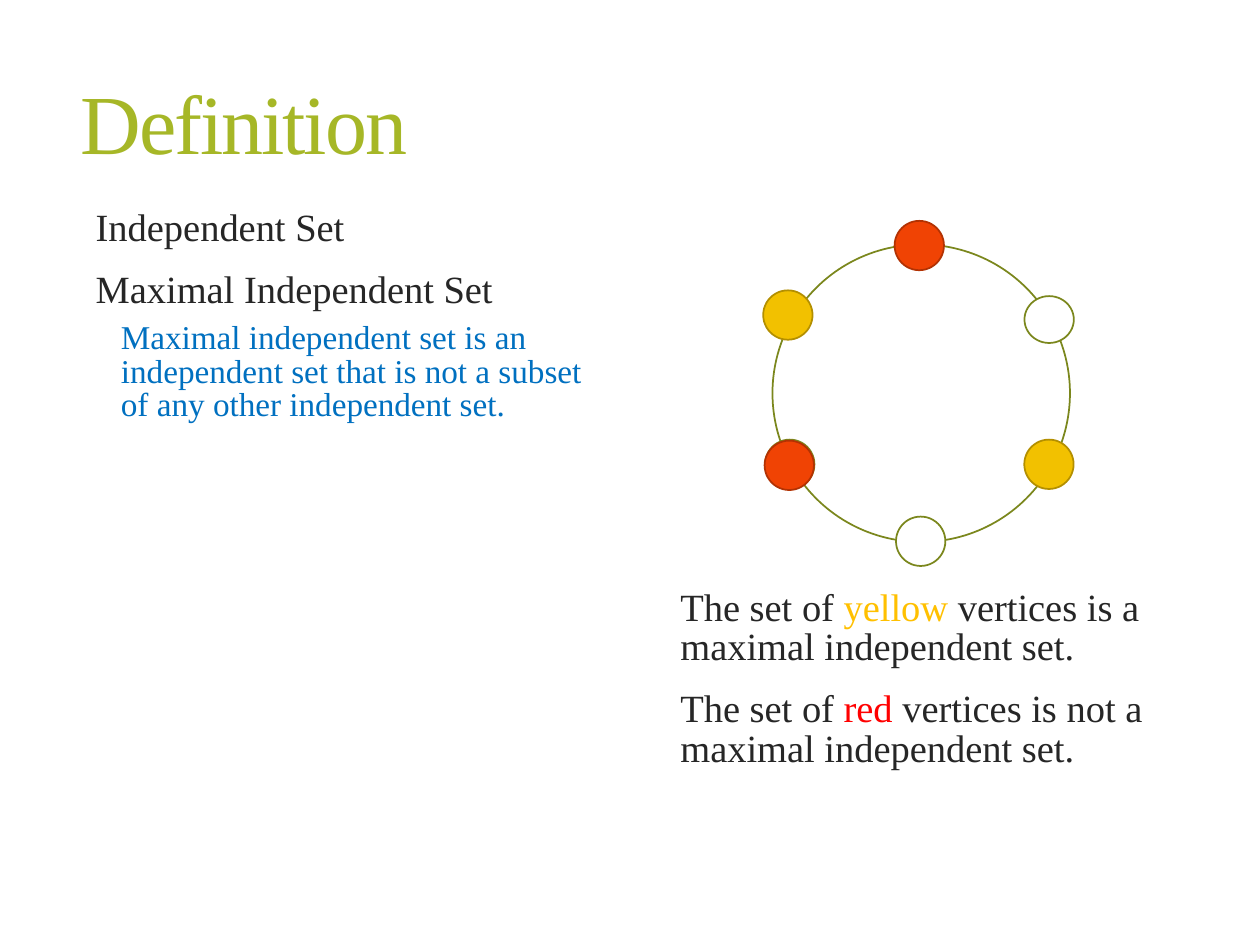
"""Build a slide that defines maximal independent sets on a ring of six vertices."""
from pptx import Presentation
from pptx.dml.color import RGBColor
from pptx.enum import text as t
from pptx.oxml import xmlchemy as x
from pptx.util import Pt

INK = {
    "title": "A6B727", "body": "262626", "note": "0070C0",
    "amber": "FFC000", "alert": "FF0000",
    "white": "FFFFFF", "olive": "7B871D",
    "red": "F04304", "rust": "B23203",
    "yellow": "F2C100", "ochre": "B38F00",
}
FONT = "Times New Roman"
SIZE = 28.2


def tint(name):
    """Return the named colour."""
    return RGBColor.from_string(INK[name])


def place(item, left, top, width, height):
    """Move and size a placeholder."""
    item.left, item.top = Pt(left), Pt(top)
    item.width, item.height = Pt(width), Pt(height)


def write(para, words, size=22, ink="body", track=None):
    """Add a formatted run to a paragraph."""
    run = para.add_run()
    run.text = words
    run.font.name, run.font.size = FONT, Pt(size)
    run.font.color.rgb = tint(ink)
    if track:
        run.font._element.set("spc", str(int(track * 100)))


def frame(item, anchor):
    """Prepare the text frame of a placeholder."""
    area = item.text_frame
    area.word_wrap = True
    area.auto_size = t.MSO_AUTO_SIZE.NONE
    area.vertical_anchor = anchor
    return area


def fill_list(item, rows):
    """Write rows of (level, runs) as a list without marks."""
    area = frame(item, t.MSO_ANCHOR.TOP)
    for i, (level, runs) in enumerate(rows):
        para = area.add_paragraph() if i else area.paragraphs[0]
        para.level = level
        para.line_spacing = 0.85
        para.space_before = Pt(6 if level else 13)
        props = para._p.get_or_add_pPr()
        props.set("marL", str(Pt(21.6 if level else 7.2)))
        props.set("indent", "0")
        props.append(x.OxmlElement("a:buNone"))
        for words, ink in runs:
            write(para, words, size=19 if level else 22, ink=ink)


def disc(shapes, left, top, fill, line, wide=SIZE, high=SIZE):
    """Draw an outlined ellipse."""
    item = shapes.add_shape(9, Pt(left), Pt(top), Pt(wide), Pt(high))
    item.shadow.inherit = False
    item.fill.solid()
    item.fill.fore_color.rgb = tint(fill)
    item.line.color.rgb = tint(line)
    item.line.width = Pt(1)


def draw_ring(shapes):
    """Draw the cycle and its coloured vertices."""
    ring = shapes.add_group_shape().shapes
    disc(ring, 441.4, 139.7, "white", "olive", 170, 170)
    disc(ring, 585.4, 169.2, "white", "olive", high=26.8)
    for left, top in ((437.2, 251.2), (512, 295.2)):
        disc(ring, left, top, "white", "olive")
    for left, top, fill, line in (
        (511.2, 126.2, "red", "rust"),
        (436.9, 251.8, "red", "rust"),
        (436.1, 165.9, "yellow", "ochre"),
        (585.3, 251.2, "yellow", "ochre"),
    ):
        disc(shapes, left, top, fill, line)


def main():
    """Build and save the slide."""
    deck = Presentation()
    deck.slide_width, deck.slide_height = Pt(720), Pt(540)
    slide = deck.slides.add_slide(deck.slide_layouts[3])
    title, left, right = list(slide.placeholders)[:3]

    place(title, 38.9, 39.6, 636.5, 66.2)
    para = frame(title, t.MSO_ANCHOR.MIDDLE).paragraphs[0]
    para.alignment = t.PP_ALIGN.LEFT
    para.line_spacing = 0.9
    write(para, "Definition", size=48, ink="title", track=-1.2)

    place(left, 40.3, 116.6, 299.5, 337)
    fill_list(left, [
        (0, [("Independent Set", "body")]),
        (0, [("Maximal Independent Set", "body")]),
        (1, [("Maximal independent set is an independent set that is "
              "not a subset of any other independent set.", "note")]),
    ])

    place(right, 374.4, 333.6, 299.5, 120)
    fill_list(right, [
        (0, [("The set of ", "body"), (word, ink),
             (f" vertices is {verb}a maximal independent set.", "body")])
        for word, ink, verb in (("yellow", "amber", ""), ("red", "alert", "not "))
    ])

    draw_ring(slide.shapes)
    deck.save("out.pptx")


if __name__ == "__main__":
    main()
